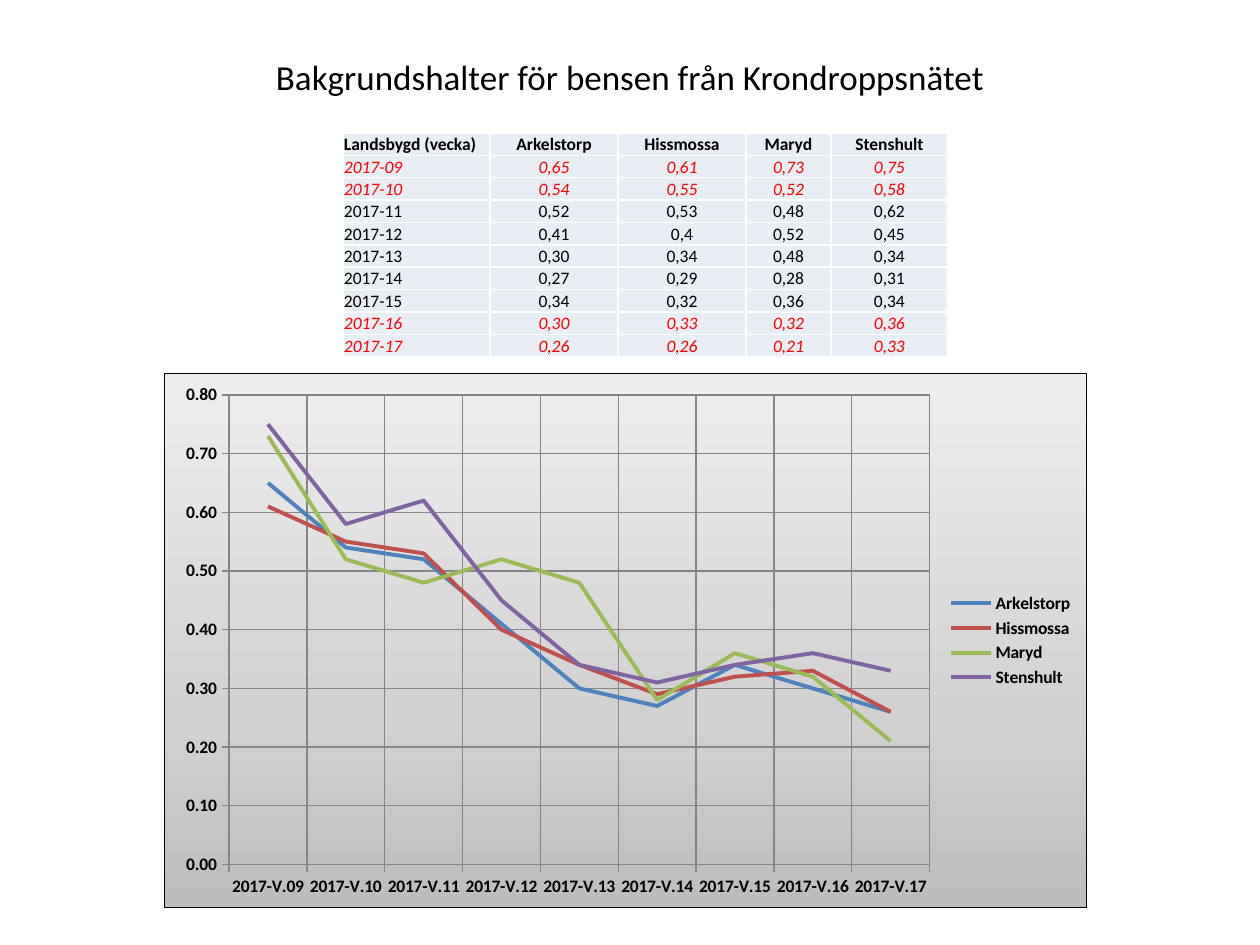
import pptx
import pptx.util
import pptx.dml.color
import pptx.enum.text
import pptx.enum.chart
import pptx.chart.data
import pptx.oxml
import pptx.oxml.ns

RGB = pptx.dml.color.RGBColor
BLACK = RGB(0x00, 0x00, 0x00)
RED = RGB(0xFF, 0x00, 0x00)
CELL = RGB(0xE9, 0xED, 0xF4)
WHITE = RGB(0xFF, 0xFF, 0xFF)
GRID = RGB(0x86, 0x86, 0x86)
BLUE = RGB(0x4F, 0x81, 0xBD)
BRICK = RGB(0xC0, 0x50, 0x4D)
GREEN = RGB(0x9B, 0xBB, 0x59)
PURPLE = RGB(0x80, 0x64, 0xA2)
BACKDROP = [(0, RGB(0xBD, 0xBD, 0xBD)), (35, RGB(0xD1, 0xD1, 0xD1)), (100, RGB(0xEE, 0xEE, 0xEE))]

ALIGN = pptx.enum.text.PP_ALIGN
ANCHOR = pptx.enum.text.MSO_ANCHOR

SITES = {"Arkelstorp": BLUE, "Hissmossa": BRICK, "Maryd": GREEN, "Stenshult": PURPLE}
WEEKS = {
    "2017-09": ["0,65", "0,61", "0,73", "0,75"],
    "2017-10": ["0,54", "0,55", "0,52", "0,58"],
    "2017-11": ["0,52", "0,53", "0,48", "0,62"],
    "2017-12": ["0,41", "0,4", "0,52", "0,45"],
    "2017-13": ["0,30", "0,34", "0,48", "0,34"],
    "2017-14": ["0,27", "0,29", "0,28", "0,31"],
    "2017-15": ["0,34", "0,32", "0,36", "0,34"],
    "2017-16": ["0,30", "0,33", "0,32", "0,36"],
    "2017-17": ["0,26", "0,26", "0,21", "0,33"],
}
MARKED_WEEKS = {"2017-09", "2017-10", "2017-16", "2017-17"}


def px(length):
    return pptx.util.Emu(round(length * 914400 / 126))


def style_font(font, size=10, color=BLACK, bold=False, italic=False):
    font.name = "Calibri"
    font.size = pptx.util.Pt(size)
    font.bold = bold
    font.italic = italic
    font.color.rgb = color


def write(frame, text, align=ALIGN.CENTER, anchor=ANCHOR.MIDDLE, **style):
    frame.word_wrap = True
    frame.vertical_anchor = anchor
    paragraph = frame.paragraphs[0]
    paragraph.alignment = align
    run = paragraph.add_run()
    run.text = text
    style_font(run.font, **style)


def xml(source):
    spaces = pptx.oxml.ns.nsdecls("a", "c")
    head, rest = source.split(">", 1)
    return pptx.oxml.parse_xml(f"{head} {spaces}>{rest}")


def solid(color):
    return f'<a:solidFill><a:srgbClr val="{color}"/></a:solidFill>'


class SlideBuilder:
    def __init__(self, slide):
        self.slide = slide

    def title(self, text, left, top, width, height):
        heading = self.slide.shapes.title
        heading.left, heading.top = px(left), px(top)
        heading.width, heading.height = px(width), px(height)
        write(heading.text_frame, text, size=20)

    def table(self, rows, left, top, widths, height, marked):
        table = self.slide.shapes.add_table(
            len(rows), len(widths), px(left), px(top), px(sum(widths)), px(height)
        ).table
        table.first_row = table.horz_banding = False
        for column, width in zip(table.columns, widths):
            column.width = px(width)
        for r, row in enumerate(rows):
            table.rows[r].height = px(height / len(rows))
            red = row[0] in marked
            for c, text in enumerate(row):
                self.cell(
                    table.cell(r, c), text,
                    align=ALIGN.CENTER if c else ALIGN.LEFT,
                    color=RED if red else BLACK, bold=r == 0, italic=red,
                )

    def cell(self, cell, text, **style):
        cell.margin_left = cell.margin_right = cell.margin_top = px(1)
        cell.margin_bottom = 0
        cell.fill.solid()
        cell.fill.fore_color.rgb = CELL
        write(cell.text_frame, text, anchor=ANCHOR.BOTTOM, **style)
        cell.vertical_anchor = ANCHOR.BOTTOM
        properties = cell._tc.get_or_add_tcPr()
        for index, side in enumerate("LRTB"):
            properties.insert(index, xml(f'<a:ln{side} w="12700">{solid(WHITE)}</a:ln{side}>'))

    def line_chart(self, categories, series, colors, left, top, width, height, plot):
        data = pptx.chart.data.CategoryChartData(number_format="0.00")
        data.categories = categories
        for name, values in series.items():
            data.add_series(name, values)
        chart = self.slide.shapes.add_chart(
            pptx.enum.chart.XL_CHART_TYPE.LINE, px(left), px(top), px(width), px(height), data
        ).chart
        style_font(chart.font, bold=True)
        chart.has_title = False
        chart.has_legend = True
        chart.legend.position = pptx.enum.chart.XL_LEGEND_POSITION.RIGHT
        chart.legend.include_in_layout = False
        style_font(chart.legend.font, bold=True)
        chart.plots[0].vary_by_categories = False
        for line in chart.plots[0].series:
            line.smooth = False
            line.marker.style = pptx.enum.chart.XL_MARKER_STYLE.NONE
            line.format.line.width = pptx.util.Pt(2.25)
            line.format.line.color.rgb = colors[line.name]
        for axis in (chart.category_axis, chart.value_axis):
            self.axis(axis)
        values = chart.value_axis
        values.minimum_scale, values.maximum_scale, values.major_unit = 0, 0.8, 0.1
        values.tick_labels.number_format = "0.00"
        values.tick_labels.number_format_is_linked = False
        self.backdrop(chart)
        self.place_plot(chart, plot)

    def axis(self, axis):
        axis.has_major_gridlines = True
        axis.major_tick_mark = pptx.enum.chart.XL_TICK_MARK.OUTSIDE
        style_font(axis.tick_labels.font, bold=True)
        for line in (axis.format.line, axis.major_gridlines.format.line):
            line.width = pptx.util.Pt(0.75)
            line.color.rgb = GRID

    def backdrop(self, chart):
        stops = "".join(
            f'<a:gs pos="{at * 1000}"><a:srgbClr val="{color}"/></a:gs>' for at, color in BACKDROP
        )
        chart._chartSpace.find(pptx.oxml.ns.qn("c:txPr")).addprevious(xml(
            f'<c:spPr><a:gradFill><a:gsLst>{stops}</a:gsLst><a:lin ang="16200000" scaled="0"/>'
            f'</a:gradFill><a:ln w="9525">{solid(BLACK)}</a:ln></c:spPr>'
        ))

    def place_plot(self, chart, plot):
        area = chart._chartSpace.chart.plotArea
        for old in area.findall(pptx.oxml.ns.qn("c:layout")):
            area.remove(old)
        sizes = "".join(f'<c:{key} val="{value}"/>' for key, value in zip("xywh", plot))
        area.insert(0, xml(
            '<c:layout><c:manualLayout><c:layoutTarget val="inner"/><c:xMode val="edge"/>'
            f'<c:yMode val="edge"/>{sizes}</c:manualLayout></c:layout>'
        ))
        area.append(xml("<c:spPr><a:noFill/></c:spPr>"))


def main():
    deck = pptx.Presentation()
    deck.slide_width, deck.slide_height = px(1260), px(945)
    builder = SlideBuilder(deck.slides.add_slide(deck.slide_layouts[5]))
    builder.title("Bakgrundshalter för bensen från Krondroppsnätet", 63, 38, 1134, 77)
    header = ["Landsbygd (vecka)", *SITES]
    rows = [header] + [[week, *levels] for week, levels in WEEKS.items()]
    builder.table(rows, 343, 133, [147, 128, 128, 85, 117], 224, MARKED_WEEKS)
    levels_by_site = {
        site: [float(level.replace(",", ".")) for level in levels]
        for site, levels in zip(SITES, zip(*WEEKS.values()))
    }
    categories = [week.replace("-", "-V.") for week in WEEKS]
    builder.line_chart(
        categories, levels_by_site, SITES, 164, 373, 923, 535, plot=(0.07, 0.04, 0.76, 0.88)
    )
    deck.save("out.pptx")


if __name__ == "__main__":
    main()
